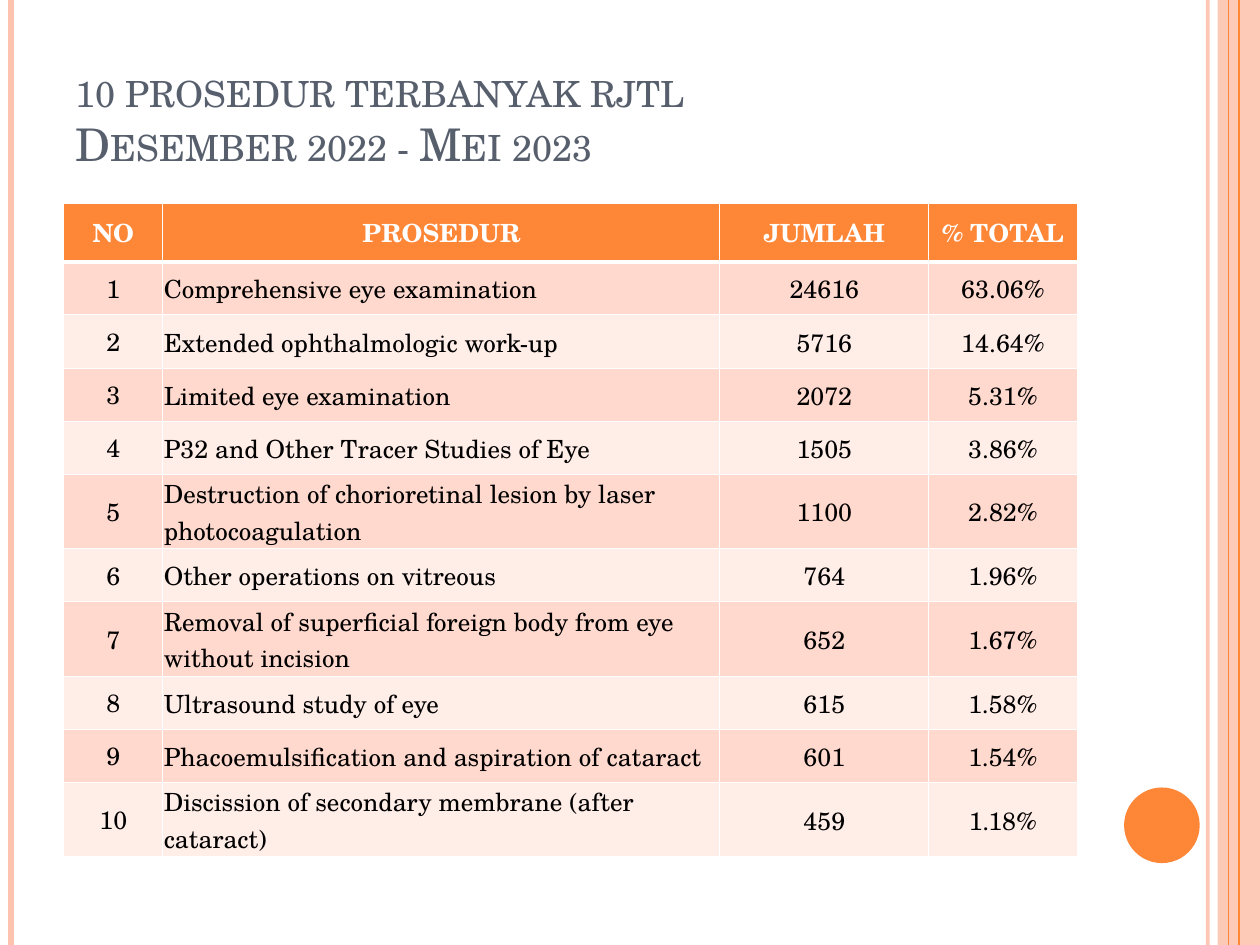
from pptx import Presentation
from pptx.dml.color import RGBColor
from pptx.enum.shapes import MSO_CONNECTOR, MSO_SHAPE
from pptx.enum.text import MSO_ANCHOR, PP_ALIGN
from pptx.oxml import parse_xml
from pptx.oxml.ns import nsdecls, qn
from pptx.util import Inches, Pt
from lxml import etree

FONT = "TeX Gyre Schola"
ORANGE = RGBColor(0xFE, 0x86, 0x37)
PEACH = RGBColor(0xFE, 0xC3, 0xAE)
SLATE = RGBColor(0x57, 0x5F, 0x6D)
BAND_DARK = RGBColor(0xFF, 0xD9, 0xCE)
BAND_LIGHT = RGBColor(0xFF, 0xED, 0xE8)
WHITE = RGBColor(0xFF, 0xFF, 0xFF)
BLACK = RGBColor(0, 0, 0)

HEADER = ("NO", "PROSEDUR", "JUMLAH", "% TOTAL")
PROCEDURES = [
    ("Comprehensive eye examination", "24616", "63.06%"),
    ("Extended ophthalmologic work-up", "5716", "14.64%"),
    ("Limited eye examination", "2072", "5.31%"),
    ("P32 and Other Tracer Studies of Eye", "1505", "3.86%"),
    ("Destruction of chorioretinal lesion by laser photocoagulation", "1100", "2.82%"),
    ("Other operations on vitreous", "764", "1.96%"),
    ("Removal of superficial foreign body from eye without incision", "652", "1.67%"),
    ("Ultrasound study of eye", "615", "1.58%"),
    ("Phacoemulsification and aspiration of cataract", "601", "1.54%"),
    ("Discission of secondary membrane (after cataract)", "459", "1.18%"),
]
COL_WIDTHS = (1.1, 6.19, 2.32, 1.65)


def set_alpha(color_parent, percent):
    """Make the colour inside a fill or line element partly transparent."""
    color = next(color_parent.iter(qn("a:srgbClr")))
    etree.SubElement(color, qn("a:alpha")).set("val", str(percent * 1000))


def set_borders(cell, bottom, top):
    """Draw white cell borders, 1 pt at the sides and as given above and below."""
    tcPr = cell._tc.get_or_add_tcPr()
    for i, (side, width) in enumerate((("L", 1), ("R", 1), ("T", top), ("B", bottom))):
        tcPr.insert(i, parse_xml(
            f'<a:ln{side} {nsdecls("a")} w="{Pt(width)}"><a:solidFill>'
            f'<a:srgbClr val="{WHITE}"/></a:solidFill></a:ln{side}>'))


prs = Presentation()
prs.slide_width, prs.slide_height = Inches(14), Inches(10.5)
s = prs.slides.add_slide(prs.slide_layouts[5])

# Side bands and accent circle
for shape_type, x, y, w, h, color, opacity in (
    (MSO_SHAPE.RECTANGLE, 13.53, 0, 0.47, 10.5, PEACH, 87),
    (MSO_SHAPE.OVAL, 12.49, 8.75, 0.84, 0.84, ORANGE, 100),
):
    sp = s.shapes.add_shape(shape_type, Inches(x), Inches(y), Inches(w), Inches(h))
    sp.shadow.inherit = False
    sp.fill.solid()
    sp.fill.fore_color.rgb = color
    sp.line.fill.background()
    if opacity < 100:
        set_alpha(sp._element.spPr, opacity)

for x, width, color, opacity in (
    (13.42, 3, PEACH, 93),
    (0.12, 4.5, PEACH, 100),
    (13.77, 1.5, ORANGE, 100),
    (13.65, 0.75, ORANGE, 100),
):
    line = s.shapes.add_connector(
        MSO_CONNECTOR.STRAIGHT, Inches(x), 0, Inches(x), prs.slide_height)
    line.line.color.rgb = color
    line.line.width = Pt(width)
    if opacity < 100:
        set_alpha(line._element.spPr, opacity)
    etree.SubElement(line._element.spPr, qn("a:effectLst"))

# Title
title = s.shapes.title
title.left, title.top = Inches(0.7), Inches(0.42)
title.width, title.height = Inches(9.37), Inches(1.75)
tf = title.text_frame
tf.text = "10 prosedur terbanyak rjtl Desember 2022 - Mei 2023"
tf.word_wrap = True
tf.vertical_anchor = MSO_ANCHOR.MIDDLE
tf.margin_left = tf.margin_right = Inches(0.14)
tf.margin_top = tf.margin_bottom = Inches(0.07)
p = tf.paragraphs[0]
p.alignment = PP_ALIGN.LEFT
font = p.runs[0].font
font.name, font.size = FONT, Pt(36)
font.color.rgb = SLATE
font._element.set("cap", "small")

# Table of procedures
rows = [HEADER] + [(str(n), *row) for n, row in enumerate(PROCEDURES, 1)]
table = s.shapes.add_table(
    len(rows), len(HEADER), Inches(0.71), Inches(2.26),
    Inches(sum(COL_WIDTHS)), Inches(6.55)).table
for col, width in zip(table.columns, COL_WIDTHS):
    col.width = Inches(width)

for i, row in enumerate(rows):
    is_header = i == 0
    table.rows[i].height = Inches(0.65 if is_header else 0.59)
    for j, text in enumerate(row):
        cell = table.cell(i, j)
        cell.text = text
        cell.vertical_anchor = MSO_ANCHOR.MIDDLE
        if is_header or j == 0:
            cell.margin_left = cell.margin_right = Inches(0.14)
            cell.margin_top = cell.margin_bottom = Inches(0.07)
        else:
            cell.margin_left = cell.margin_right = cell.margin_top = Inches(0.01)
            cell.margin_bottom = 0
        cell.fill.solid()
        cell.fill.fore_color.rgb = (
            ORANGE if is_header else BAND_DARK if i % 2 else BAND_LIGHT)
        set_borders(cell, bottom=3 if is_header else 1, top=3 if i == 1 else 1)
        p = cell.text_frame.paragraphs[0]
        p.alignment = PP_ALIGN.LEFT if j == 1 and not is_header else PP_ALIGN.CENTER
        font = p.runs[0].font
        font.name, font.size, font.bold = FONT, Pt(20), is_header
        font.color.rgb = WHITE if is_header else BLACK

prs.save("out.pptx")
